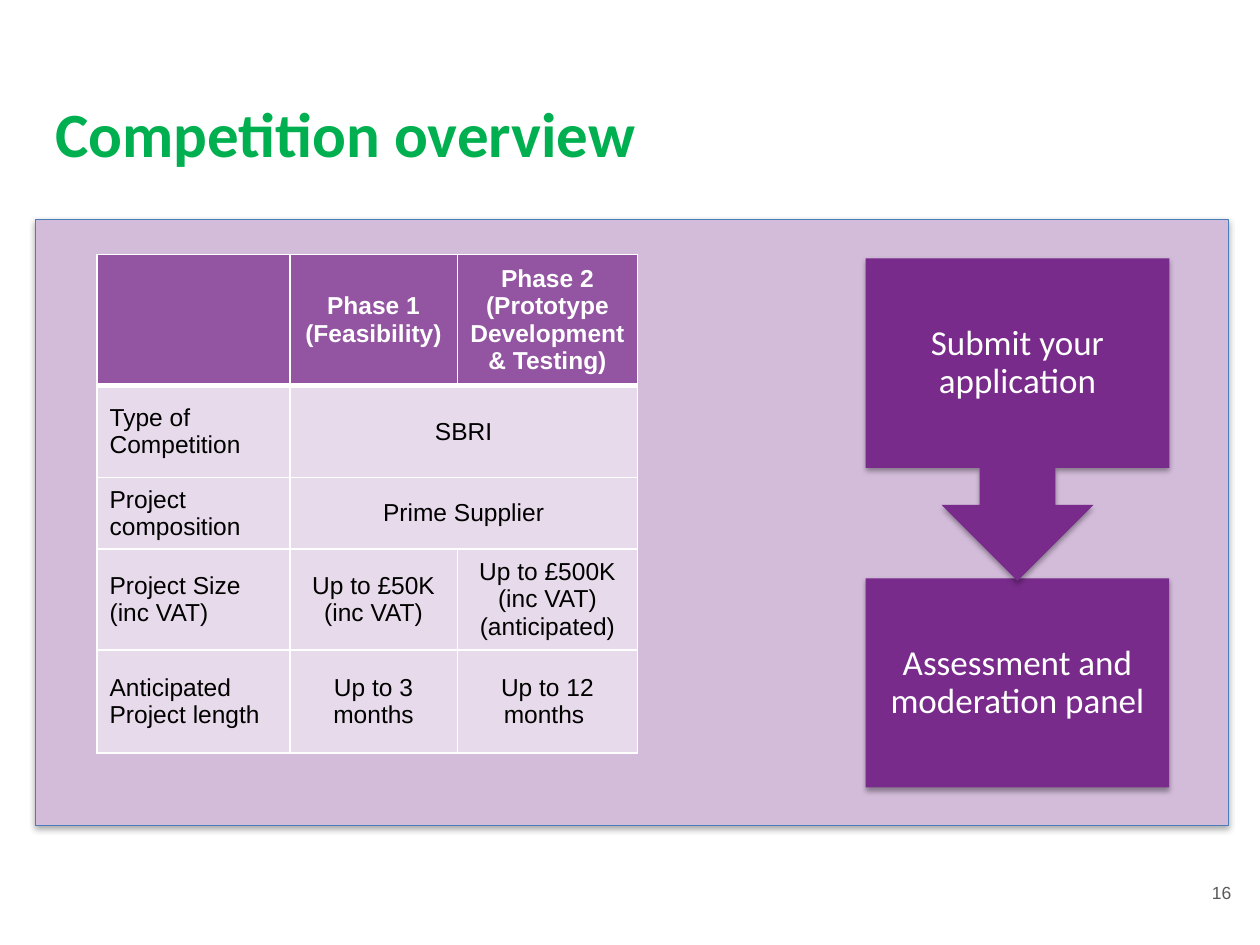
from lxml.etree import SubElement
from pptx import Presentation
from pptx.dml.color import RGBColor
from pptx.enum.shapes import MSO_SHAPE
from pptx.enum.text import MSO_ANCHOR, PP_ALIGN
from pptx.oxml.ns import qn
from pptx.util import Inches, Pt

GREEN = RGBColor(0x00, 0xB0, 0x50)
GREY = RGBColor(0x59, 0x59, 0x59)
LILAC = RGBColor(0xD3, 0xBC, 0xDA)
BLUE = RGBColor(0x4A, 0x7D, 0xBA)
PURPLE = RGBColor(0x79, 0x2B, 0x8B)
WHITE = RGBColor(0xFF, 0xFF, 0xFF)
BLACK = RGBColor(0x00, 0x00, 0x00)


def add_text(page, place, text, font, size, color, align, anchor, inset):
    box = page.shapes.add_textbox(*[Inches(value) for value in place])
    frame = box.text_frame
    frame.word_wrap = True
    frame.vertical_anchor = anchor
    frame.margin_left = frame.margin_right = Inches(inset)
    frame.margin_top = frame.margin_bottom = Inches(inset)
    frame.text = text
    para = frame.paragraphs[0]
    para.alignment = align
    span = para.runs[0]
    span.font.name = font
    span.font.size = Pt(size)
    span.font.color.rgb = color
    return para


def add_block(page, kind, place, color):
    shape = page.shapes.add_shape(kind, *[Inches(value) for value in place])
    shape.fill.solid()
    shape.fill.fore_color.rgb = color
    shape.line.fill.background()
    shape.shadow.inherit = False
    effects = shape.element.spPr.find(qn("a:effectLst"))
    shadow = SubElement(effects, qn("a:outerShdw"), blurRad="40000",
                        dist="23000", dir="5400000", rotWithShape="0")
    tone = SubElement(shadow, qn("a:srgbClr"), val=str(BLACK))
    SubElement(tone, qn("a:alpha"), val="35000")
    return shape


deck = Presentation()
deck.slide_width = Inches(10)
deck.slide_height = Inches(7.5)
page = deck.slides.add_slide(deck.slide_layouts[6])

title = add_text(page, (0.34, 0.65, 9.32, 0.84), "Competition overview",
                 "Calibri", 36, GREEN, PP_ALIGN.LEFT, MSO_ANCHOR.TOP, 0.1)
title.runs[0].font.bold = True
add_text(page, (9.27, 6.8, 0.6, 0.57), "16", "Arial", 10, GREY,
         PP_ALIGN.RIGHT, MSO_ANCHOR.MIDDLE, 0.1)

panel = add_block(page, MSO_SHAPE.RECTANGLE, (0.28, 1.74, 9.47, 4.81), LILAC)
panel.line.color.rgb = BLUE
panel.line.width = Pt(0.75)

add_block(page, MSO_SHAPE.RECTANGLE, (6.87, 4.59, 2.41, 1.66), PURPLE)
callout = add_block(page, MSO_SHAPE.UP_ARROW_CALLOUT, (6.87, 2.05, 2.41, 2.56), PURPLE)
callout.rotation = 180
for index, value in enumerate((0.25, 0.25, 0.25, 0.65)):
    callout.adjustments[index] = value

steps = [(2.05, "Submit your application"), (4.59, "Assessment and moderation panel")]
for top, text in steps:
    step = add_text(page, (6.87, top, 2.41, 1.66), text, "Calibri", 20, WHITE,
                    PP_ALIGN.CENTER, MSO_ANCHOR.MIDDLE, 0.16)
    step.line_spacing = 0.9

rows = [
    ("", "Phase 1 (Feasibility)", "Phase 2 (Prototype Development & Testing)"),
    ("Type of Competition", "SBRI", ""),
    ("Project composition", "Prime Supplier", ""),
    ("Project Size (inc VAT)", "Up to £50K\n(inc VAT)", "Up to £500K (inc VAT) (anticipated)"),
    ("Anticipated Project length", "Up to 3 months", "Up to 12 months "),
]
widths = (1.53, 1.33, 1.43)
heights = (1.04, 0.73, 0.52, 0.73, 0.82)
table = page.shapes.add_table(len(rows), len(widths), Inches(0.77), Inches(2.02),
                              Inches(sum(widths)), Inches(sum(heights))).table
for column, width in zip(table.columns, widths):
    column.width = Inches(width)
for row, height in zip(table.rows, heights):
    row.height = Inches(height)
for row_index in (1, 2):
    table.cell(row_index, 1).merge(table.cell(row_index, 2))

for row_index, texts in enumerate(rows):
    header = row_index == 0
    for column_index, text in enumerate(texts):
        cell = table.cell(row_index, column_index)
        properties = cell._tc.get_or_add_tcPr()
        for side in ("L", "R", "T", "B"):
            thick = (side == "B" and header) or (side == "T" and row_index == 1)
            border = SubElement(properties, qn(f"a:ln{side}"), w=str(Pt(3 if thick else 1)))
            paint = SubElement(border, qn("a:solidFill"))
            SubElement(paint, qn("a:srgbClr"), val=str(WHITE))
        cell.fill.solid()
        cell.fill.fore_color.rgb = PURPLE if header else WHITE
        tone = properties.find(qn("a:solidFill")).find(qn("a:srgbClr"))
        SubElement(tone, qn("a:alpha"), val="71000" if header else "46000")
        cell.vertical_anchor = MSO_ANCHOR.MIDDLE
        if not text:
            continue
        cell.text_frame.text = text
        for para in cell.text_frame.paragraphs:
            para.alignment = PP_ALIGN.CENTER if column_index else PP_ALIGN.LEFT
            for span in para.runs:
                span.font.name = "Arial"
                span.font.size = Pt(14)
                span.font.bold = header
                span.font.color.rgb = WHITE if header else BLACK

deck.save("out.pptx")
